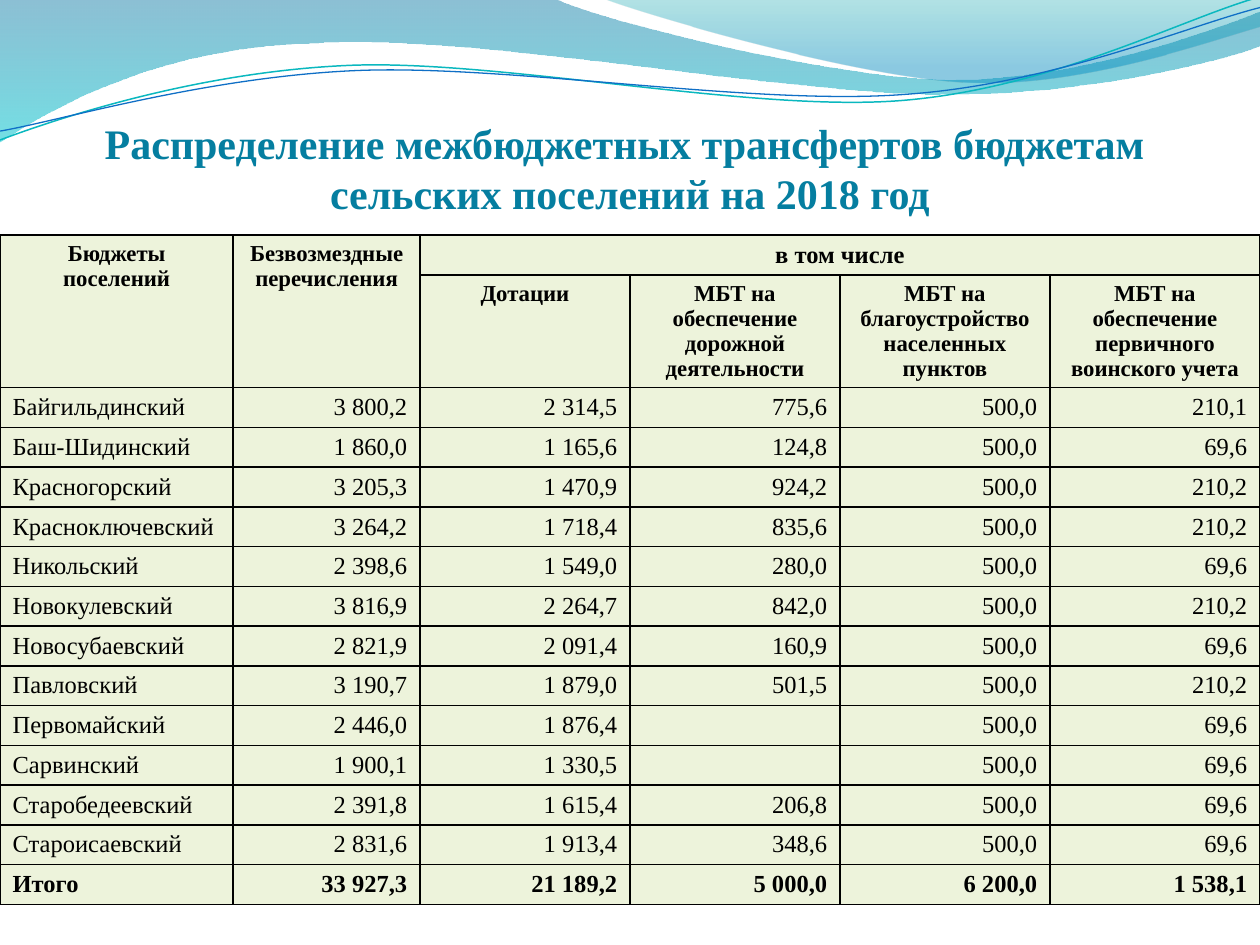
import lxml.etree
import pptx
import pptx.dml.color
import pptx.enum.text
import pptx.oxml.ns
import pptx.util

Pt = pptx.util.Pt
RGBColor = pptx.dml.color.RGBColor
Align = pptx.enum.text.PP_ALIGN
Anchor = pptx.enum.text.MSO_ANCHOR
qn = pptx.oxml.ns.qn

BLACK = RGBColor(0x00, 0x00, 0x00)
TITLE_TEAL = RGBColor(0x05, 0x7E, 0xA0)
CELL_GREEN = RGBColor(0xED, 0xF3, 0xDB)
DEEP_BLUE = RGBColor(0x00, 0x74, 0xA1)
CYAN = RGBColor(0x00, 0xC6, 0xCF)
SEA_GREEN = RGBColor(0x00, 0xA1, 0xA9)
SKY_BLUE = RGBColor(0x00, 0x8B, 0xBF)
LINE_TEAL = RGBColor(0x0A, 0xB8, 0xBF)
LINE_BLUE = RGBColor(0x0F, 0x6F, 0xC6)

FONT = "Times New Roman"
COLUMN_WIDTHS = [133.2, 106.8, 120, 120, 120, 120]
ROW_HEIGHTS = [22.8, 64.3] + [22.7] * 13

WIDE_BAND = [
    [(0, 0)], [(317, -0.7)],
    [(343, 12), (478, 45.4), (546, 45.4)],
    [(614, 45.4), (690, 18.7), (720, 6.5)],
    [(720.7, 26)],
    [(708, 31.7), (626, 54.7), (537, 54)],
    [(448, 54), (275, 20.2), (185, 24.5)],
    [(93, 26), (33, 59.8), (-0.7, 81.4)],
    [(0, 0)],
]
CORNER_BAND = [
    [(345, -0.7)],
    [(366.5, 7.9), (491, 44.6), (553.7, 46.8)],
    [(618, 49.7), (692, 23), (720, 15.1)],
    [(720, 0)],
    [(345, -0.7)],
]
TEAL_WAVE = [
    [(0, 80)],
    [(34.6, 67), (113.8, 41), (199.4, 37.4)],
    [(284.4, 33.8), (427, 64), (513.4, 57.6)],
    [(599.8, 51.1), (675.4, 10.8), (718.6, -1.4)],
]
BLUE_WAVE = [
    [(0, 74.9)],
    [(33.8, 69.1), (118, 43.9), (203.8, 40.3)],
    [(290.2, 36.7), (429.8, 60.5), (516.2, 54)],
    [(602, 48.2), (677.5, 15.1), (720, 4.3)],
]

COLUMN_HEADS = [
    "Дотации",
    "МБТ на обеспечение дорожной деятельности",
    "МБТ на благоустройство населенных пунктов",
    "МБТ на обеспечение первичного воинского учета",
]
TRANSFERS = """
Байгильдинский|3 800,2|2 314,5|775,6|500,0|210,1
Баш-Шидинский|1 860,0|1 165,6|124,8|500,0|69,6
Красногорский|3 205,3|1 470,9|924,2|500,0|210,2
Красноключевский|3 264,2|1 718,4|835,6|500,0|210,2
Никольский|2 398,6|1 549,0|280,0|500,0|69,6
Новокулевский|3 816,9|2 264,7|842,0|500,0|210,2
Новосубаевский|2 821,9|2 091,4|160,9|500,0|69,6
Павловский|3 190,7|1 879,0|501,5|500,0|210,2
Первомайский|2 446,0|1 876,4||500,0|69,6
Сарвинский|1 900,1|1 330,5||500,0|69,6
Старобедеевский|2 391,8|1 615,4|206,8|500,0|69,6
Староисаевский|2 831,6|1 913,4|348,6|500,0|69,6
Итого|33 927,3|21 189,2|5 000,0|6 200,0|1 538,1
"""


def write_text(paragraph, text, size=14, bold=False, color=BLACK, align=Align.LEFT):
    """Fill a paragraph with one formatted run, or only size it when there is no text."""
    paragraph.alignment = align
    if not text:
        ending = paragraph._p.get_or_add_endParaRPr()
        ending.set("sz", str(size * 100))
        lxml.etree.SubElement(ending, qn("a:latin"), typeface=FONT)
        return
    run = paragraph.add_run()
    run.text = text
    run.font.name = FONT
    run.font.size = Pt(size)
    run.font.bold = bold
    run.font.color.rgb = color


def add_outline(slide, segments, close):
    """Draw a shadowless freeform of lines and cubic curves."""
    start, *ends = [(Pt(x), Pt(y)) for x, y in (segment[-1] for segment in segments)]
    builder = slide.shapes.build_freeform(*start)
    builder.add_line_segments(ends, close=close)
    outline = builder.convert_to_shape()
    outline.shadow.inherit = False
    steps = list(outline._element.iter(qn("a:lnTo")))
    for step, segment in zip(steps, segments[1:]):
        if len(segment) == 3:
            step.tag = qn("a:cubicBezTo")
            for index, (x, y) in enumerate(segment[:2]):
                handle = lxml.etree.Element(
                    qn("a:pt"), x=str(Pt(x) - outline.left), y=str(Pt(y) - outline.top))
                step.insert(index, handle)
    return outline


def add_band(slide, segments, stops):
    """Add a translucent band shaded from top to bottom."""
    band = add_outline(slide, segments, True)
    band.line.fill.background()
    band.fill.gradient()
    band.fill.gradient_angle = 270
    for stop, (position, color, _) in zip(band.fill.gradient_stops, stops):
        stop.position = position
        stop.color.rgb = color
    tints = band._element.spPr.iter(qn("a:srgbClr"))
    for tint, (_, _, opacity) in zip(tints, stops):
        lxml.etree.SubElement(tint, qn("a:alpha")).set("val", str(opacity * 1000))


def add_wave(slide, segments, color, width):
    """Add a thin open curve."""
    wave = add_outline(slide, segments, False)
    wave.fill.background()
    wave.line.color.rgb = color
    wave.line.width = Pt(width)


def style_cell(cell):
    """Give a cell its black borders and pale fill."""
    properties = cell._tc.get_or_add_tcPr()
    for side in ("lnL", "lnR", "lnT", "lnB"):
        border = lxml.etree.SubElement(properties, qn("a:" + side), w=str(Pt(1)))
        solid = lxml.etree.SubElement(border, qn("a:solidFill"))
        lxml.etree.SubElement(solid, qn("a:srgbClr"), val=str(BLACK))
    cell.fill.solid()
    cell.fill.fore_color.rgb = CELL_GREEN


def add_transfers(slide):
    """Add the table of transfers by settlement."""
    frame = slide.shapes.add_table(
        len(ROW_HEIGHTS), len(COLUMN_WIDTHS), 0, Pt(134.4), Pt(sum(COLUMN_WIDTHS)), Pt(sum(ROW_HEIGHTS)))
    table = frame.table
    table.first_row = table.horz_banding = False
    for column, width in zip(table.columns, COLUMN_WIDTHS):
        column.width = Pt(width)
    for row, height in zip(table.rows, ROW_HEIGHTS):
        row.height = Pt(height)
    for cell in table.iter_cells():
        style_cell(cell)

    def write_cell(row, column, text, **text_format):
        """Write into the first paragraph of a cell."""
        write_text(table.cell(row, column).text_frame.paragraphs[0], text, **text_format)

    for column, head in enumerate(["Бюджеты поселений", "Безвозмездные перечисления"]):
        table.cell(0, column).merge(table.cell(1, column))
        write_cell(0, column, head, size=13, bold=True, align=Align.CENTER)
    table.cell(0, 2).merge(table.cell(0, 5))
    write_cell(0, 2, "в том числе", bold=True, align=Align.CENTER)
    for column, head in enumerate(COLUMN_HEADS, 2):
        write_cell(1, column, head, size=13, bold=True, align=Align.CENTER)
    for row, record in enumerate(TRANSFERS.strip().splitlines(), 2):
        for column, value in enumerate(record.split("|")):
            write_cell(row, column, value, bold=record.startswith("Итого"),
                       align=Align.RIGHT if column else Align.LEFT)


def add_title(slide, lines):
    """Add the centred title, one paragraph a line."""
    frame = slide.shapes.add_textbox(0, Pt(67.5), Pt(720), Pt(56.9)).text_frame
    frame.word_wrap = True
    frame.vertical_anchor = Anchor.MIDDLE
    for index, line in enumerate(lines):
        paragraph = frame.add_paragraph() if index else frame.paragraphs[0]
        write_text(paragraph, line, size=24, bold=True, color=TITLE_TEAL, align=Align.CENTER)


def main():
    """Build the slide and save it."""
    deck = pptx.Presentation()
    deck.slide_width, deck.slide_height = Pt(720), Pt(540)
    slide = deck.slides.add_slide(deck.slide_layouts[6])
    add_band(slide, WIDE_BAND, [(0, DEEP_BLUE, 45), (1, CYAN, 55)])
    add_band(slide, CORNER_BAND, [(0, SEA_GREEN, 30), (0.8, SKY_BLUE, 45)])
    add_wave(slide, TEAL_WAVE, LINE_TEAL, 0.85)
    add_wave(slide, BLUE_WAVE, LINE_BLUE, 0.75)
    add_transfers(slide)
    add_title(slide, ["Распределение межбюджетных трансфертов бюджетам ",
                      "сельских поселений на 2018 год"])
    deck.save("out.pptx")


if __name__ == "__main__":
    main()
